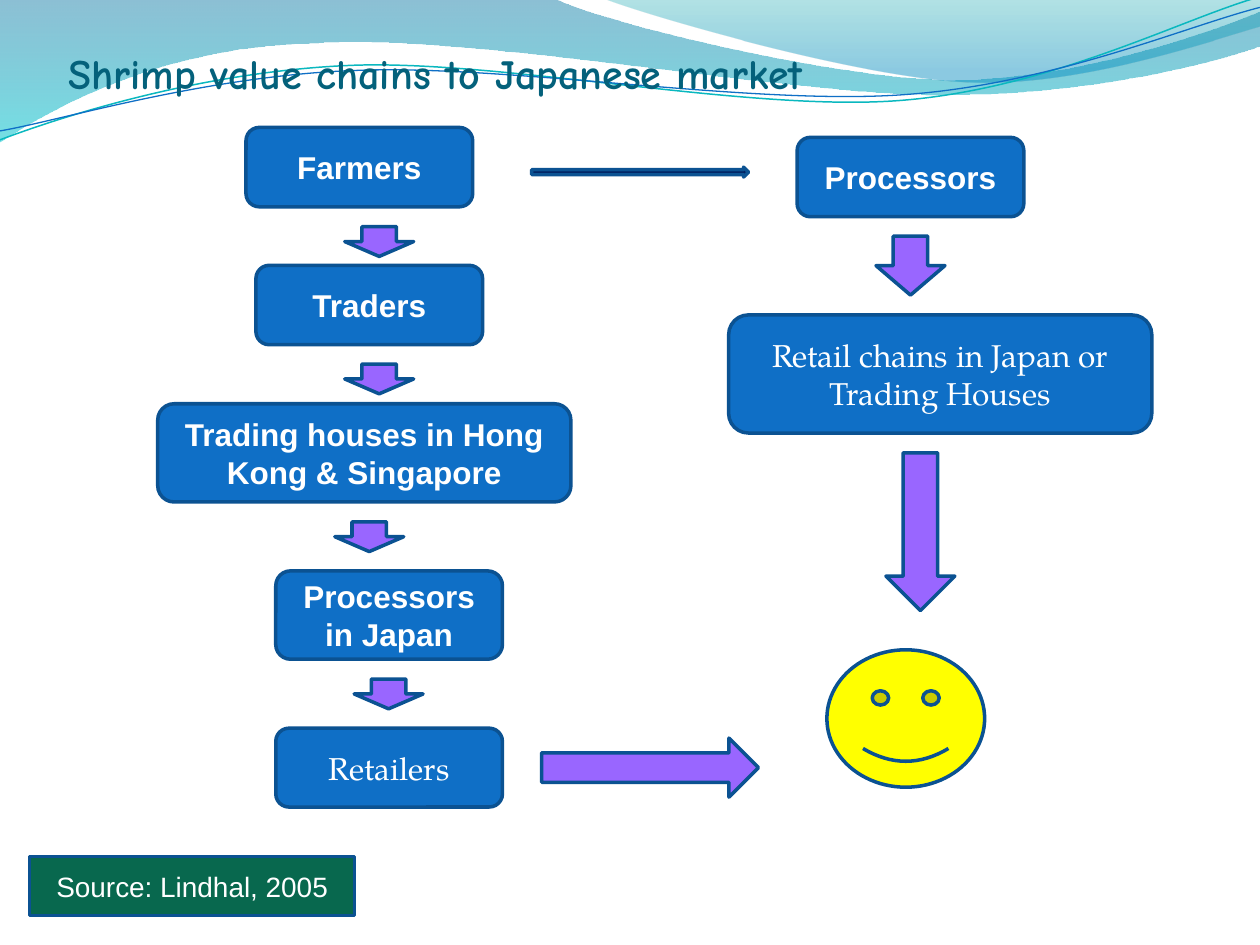
import pptx
import pptx.util
import pptx.dml.color
import pptx.enum.shapes
import pptx.enum.text
import pptx.oxml
import pptx.oxml.ns
import lxml.etree

Cm = pptx.util.Cm
Pt = pptx.util.Pt
SHAPE = pptx.enum.shapes.MSO_SHAPE
ANCHOR = pptx.enum.text.MSO_ANCHOR
RGB = pptx.dml.color.RGBColor.from_string
qn = pptx.oxml.ns.qn

colors = {
    "box": "0F6FC6", "outline": "0B5292", "arrow": "9966FF", "thin_arrow": "002060",
    "customer": "FFFF00", "source": "08684E", "title": "04617B", "text": "FFFFFF",
    "teal_line": "0AB8BF", "blue_line": "0F6FC6",
    "wave_top": "0074A1", "wave_bottom": "00C6CF",
    "crest_top": "00A1A9", "crest_bottom": "008BBF",
}

presentation = pptx.Presentation()
presentation.slide_width = Cm(25.4)
presentation.slide_height = Cm(19.05)
slide = presentation.slides.add_slide(presentation.slide_layouts[6])


def add_curve(start, segments, closed):
    builder = slide.shapes.build_freeform(Cm(start[0]), Cm(start[1]))
    vertices = [(Cm(x), Cm(y)) for segment in segments
                for x, y in zip(segment[::2], segment[1::2])]
    builder.add_line_segments(vertices, close=closed)
    curve = builder.convert_to_shape()
    curve.shadow.inherit = False
    steps = iter(curve._element.xpath(".//a:lnTo"))
    for segment in segments:
        first = next(steps)
        if len(segment) == 6:
            first.tag = qn("a:cubicBezTo")
            for control in (next(steps), next(steps)):
                first.append(control[0])
                control.getparent().remove(control)
    return curve


def add_part(kind, place, color, lines=(), font="Arial", size=18, bold=False):
    part = slide.shapes.add_shape(kind, *[Cm(length) for length in place])
    part.shadow.inherit = False
    part.fill.solid()
    part.fill.fore_color.rgb = RGB(colors[color])
    part.line.color.rgb = RGB(colors["outline"])
    part.line.width = Pt(2)
    frame = part.text_frame
    frame.word_wrap = True
    frame.vertical_anchor = ANCHOR.MIDDLE
    for index, line in enumerate(lines):
        paragraph = frame.add_paragraph() if index else frame.paragraphs[0]
        paragraph.text = line
        paragraph.alignment = pptx.enum.text.PP_ALIGN.CENTER
        paragraph.font.name = font
        paragraph.font.size = Pt(size)
        paragraph.font.bold = bold
        paragraph.font.color.rgb = RGB(colors["text"])


waves = [
    ((0, 0),
     [(11.18, -0.03), (12.09, 0.43, 16.87, 1.6, 19.25, 1.6),
      (21.67, 1.6, 24.33, 0.66, 25.4, 0.23), (25.43, 0.91),
      (24.97, 1.12, 22.1, 1.93, 18.95, 1.91), (15.8, 1.91, 9.7, 0.71, 6.53, 0.86),
      (3.28, 0.91, 1.17, 2.11, -0.03, 2.87), (0, 0)],
     [("wave_top", 0, 45), ("wave_bottom", 1, 55)]),
    ((12.17, -0.03),
     [(12.93, 0.28, 17.32, 1.57, 19.53, 1.65),
      (21.74, 1.75, 24.41, 0.81, 25.4, 0.53), (25.4, 0), (12.17, -0.03)],
     [("crest_top", 0, 30), ("crest_bottom", 0.8, 45)]),
]
for start, segments, stops in waves:
    wave = add_curve(start, segments, True)
    wave.line.fill.background()
    wave.fill.gradient()
    wave.fill.gradient_angle = 270
    for stop, (color, position, opacity) in zip(wave.fill.gradient_stops, stops):
        stop.color.rgb = RGB(colors[color])
        stop.position = position
    tints = wave._element.xpath("./p:spPr/a:gradFill//a:srgbClr")
    for tint, (color, position, opacity) in zip(tints, stops):
        lxml.etree.SubElement(tint, qn("a:alpha"), val=str(opacity * 1000))

ripples = [
    ((0, 2.82),
     [(1.22, 2.36, 4.01, 1.45, 7.04, 1.32), (10.03, 1.19, 15.06, 2.26, 18.11, 2.03),
      (21.16, 1.8, 23.83, 0.38, 25.35, -0.05)], "teal_line", 0.85),
    ((0, 2.64),
     [(1.19, 2.44, 4.17, 1.52, 7.19, 1.42), (10.24, 1.3, 15.16, 2.13, 18.21, 1.91),
      (21.23, 1.7, 23.9, 0.53, 25.4, 0.15)], "blue_line", 0.75),
]
for start, segments, color, width in ripples:
    ripple = add_curve(start, segments, False)
    ripple.fill.background()
    ripple.line.color.rgb = RGB(colors[color])
    ripple.line.width = Pt(width)

title = slide.shapes.add_textbox(Cm(1.38), Cm(0.58), Cm(22.86), Cm(1.4)).text_frame
title.word_wrap = True
title.vertical_anchor = ANCHOR.BOTTOM
title.margin_left = title.margin_right = title.margin_bottom = 0
heading = title.paragraphs[0]
heading.text = "Shrimp value chains to Japanese market"
heading.font.name = "Comic Neue"
heading.font.size = Pt(24)
heading.font.bold = True
heading.font.color.rgb = RGB(colors["title"])

actors = [
    ((4.96, 2.57, 4.57, 1.6), ["Farmers"]),
    ((5.16, 5.35, 4.57, 1.6), ["Traders"]),
    ((3.18, 8.14, 8.33, 1.98), ["Trading houses in Hong Kong & Singapore"]),
    ((5.56, 11.51, 4.57, 1.78), ["Processors in Japan"]),
    ((16.07, 2.77, 4.57, 1.6), ["Processors"]),
]
for place, lines in actors:
    add_part(SHAPE.ROUNDED_RECTANGLE, place, "box", lines, bold=True)

sellers = [
    ((14.69, 6.35, 8.53, 2.38), ["Retail chains in Japan or", "Trading Houses"]),
    ((5.56, 14.68, 4.57, 1.59), ["Retailers"]),
]
for place, lines in sellers:
    add_part(SHAPE.ROUNDED_RECTANGLE, place, "box", lines, "TeX Gyre Pagella")

add_part(SHAPE.SMILEY_FACE, (16.67, 13.1, 3.18, 2.77), "customer")

for left, top, height in [(6.95, 4.57, 0.6), (6.95, 7.34, 0.6), (6.75, 10.52, 0.6),
                          (7.14, 13.69, 0.6)]:
    add_part(SHAPE.DOWN_ARROW, (left, top, 1.39, height), "arrow")
add_part(SHAPE.RIGHT_ARROW, (10.92, 14.88, 4.37, 1.19), "arrow")
add_part(SHAPE.RIGHT_ARROW, (10.72, 3.37, 4.37, 0.2), "thin_arrow")
for left, top, height in [(17.66, 4.76, 1.19), (17.86, 9.13, 3.18)]:
    add_part(SHAPE.DOWN_ARROW, (left, top, 1.39, height), "arrow")

add_part(SHAPE.RECTANGLE, (0.6, 17.27, 6.55, 1.19), "source",
         ["Source: Lindhal, 2005"], size=16)

presentation.save("out.pptx")
